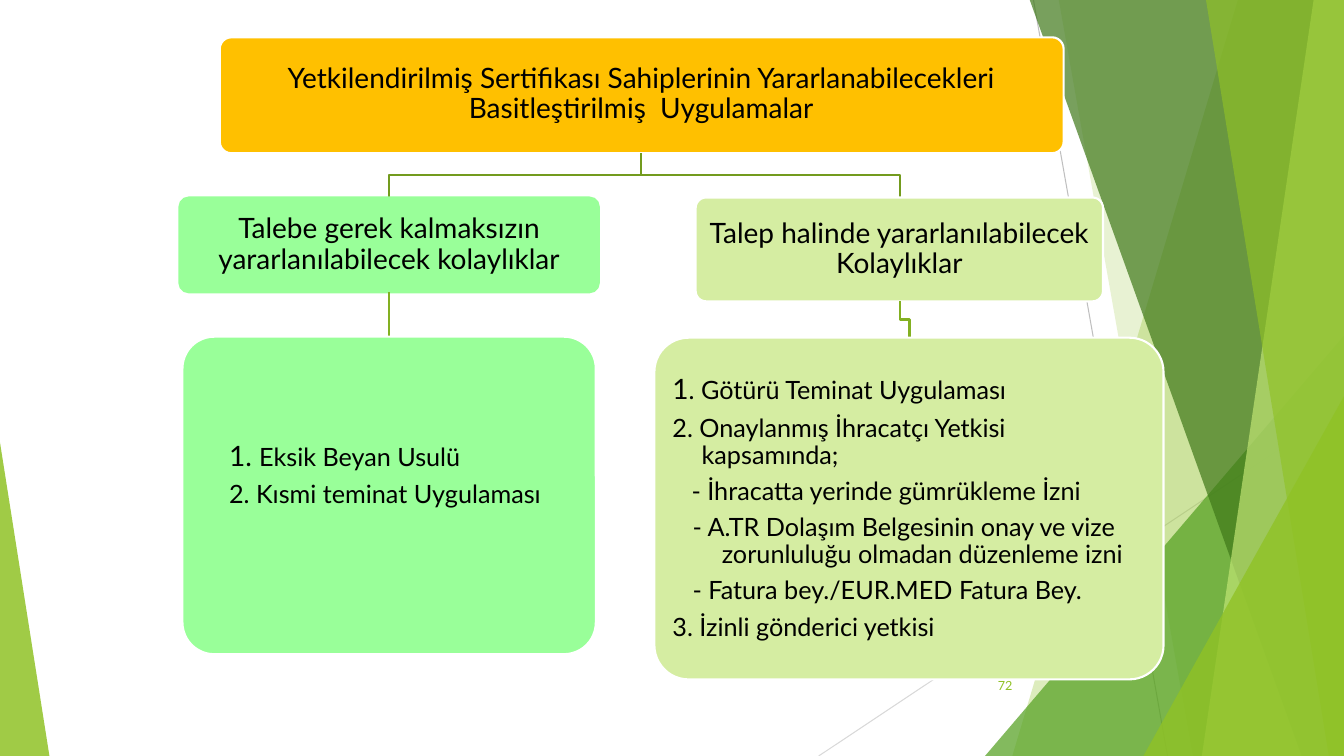
from dataclasses import dataclass

import pptx
import pptx.dml.color
import pptx.enum.shapes
import pptx.enum.text
import pptx.oxml.ns
import pptx.oxml.xmlchemy
import pptx.util
from lxml import etree

PX = 9144  # EMU per px, 100 px to the inch
SHAPE = pptx.enum.shapes.MSO_SHAPE
ALIGN = pptx.enum.text.PP_ALIGN
ANCHOR = pptx.enum.text.MSO_ANCHOR


@dataclass(frozen=True)
class Theme:
    font: str = "Lato"
    heading_size: int = 20
    body_size: int = 18
    number_size: int = 9
    text: str = "000000"
    white: str = "FFFFFF"
    amber: str = "FFC000"
    mint: str = "99FF99"
    lime: str = "D5EDA2"
    fork: str = "739B1E"
    stem: str = "83B022"
    accent: str = "90C226"
    green: str = "54A021"
    dark_green: str = "3F7819"
    pale_green: str = "C0E474"
    grey: str = "BFBFBF"
    light_grey: str = "D9D9D9"


@dataclass(frozen=True)
class Item:
    """A paragraph; lead is its opening part in heading size, lengths in px."""
    text: str
    lead: str = ""
    left: int = 0
    indent: int = 0


def rgb(color):
    return pptx.dml.color.RGBColor.from_string(color)


def write(shape, items, *, theme, size, color, align=ALIGN.LEFT, margins=(8, 8, 8, 8)):
    frame = shape.text_frame
    frame.word_wrap = True
    frame.auto_size = pptx.enum.text.MSO_AUTO_SIZE.NONE
    frame.vertical_anchor = ANCHOR.MIDDLE
    (frame.margin_left, frame.margin_top,
     frame.margin_right, frame.margin_bottom) = [margin * PX for margin in margins]
    for index, item in enumerate(items):
        paragraph = frame.paragraphs[0] if index == 0 else frame.add_paragraph()
        paragraph.alignment = align
        paragraph.line_spacing = 0.9
        paragraph.space_before = pptx.util.Pt(0)
        tallest = theme.heading_size if item.lead else size
        paragraph.space_after = pptx.util.Pt(0.35 * tallest)
        properties = paragraph._p.get_or_add_pPr()
        properties.set("marL", str(item.left * PX))
        properties.set("indent", str(item.indent * PX))
        for text, run_size in ((item.lead, theme.heading_size), (item.text, size)):
            if text:
                run = paragraph.add_run()
                run.text = text
                run.font.name = theme.font
                run.font.size = pptx.util.Pt(run_size)
                run.font.color.rgb = rgb(color)


class SlideBuilder:
    def __init__(self, slide, theme):
        self.slide = slide
        self.shapes = slide.shapes
        self.theme = theme

    def paint(self, shape, fill=None, line=None, opacity=100):
        shape.shadow.inherit = False
        if fill:
            shape.fill.solid()
            shape.fill.fore_color.rgb = rgb(fill)
            if opacity < 100:
                color = shape._element.spPr.find(".//" + pptx.oxml.ns.qn("a:srgbClr"))
                alpha = etree.SubElement(color, pptx.oxml.ns.qn("a:alpha"))
                alpha.set("val", str(opacity * 1000))
        else:
            shape.fill.background()
        if line:
            shape.line.color.rgb = rgb(line)
            shape.line.width = pptx.util.Pt(1.5)
        else:
            shape.line.fill.background()

    def outline(self, points, closed=True, **paint):
        builder = self.shapes.build_freeform(*points[0], scale=PX)
        builder.add_line_segments(points[1:], close=closed)
        self.paint(builder.convert_to_shape(), **paint)

    def triangle(self, box, apex, fill, opacity):
        shape = self.shapes.add_shape(SHAPE.ISOSCELES_TRIANGLE, *[v * PX for v in box])
        shape.adjustments[0] = apex
        self.paint(shape, fill, opacity=opacity)

    def line(self, start, end, color, width):
        connector = self.shapes.add_connector(
            pptx.enum.shapes.MSO_CONNECTOR.STRAIGHT, *[v * PX for v in start + end])
        connector.line.color.rgb = rgb(color)
        connector.line.width = pptx.util.Pt(width)
        etree.SubElement(connector._element.spPr, pptx.oxml.ns.qn("a:effectLst"))

    def link(self, start, end, color):
        """Join two boxes, bending halfway down when they are not aligned."""
        if start[0] == end[0]:
            self.line(start, end, color, 1.5)
            return
        middle = (start[1] + end[1]) // 2
        points = [start, (start[0], middle), (end[0], middle), end]
        self.outline(points, closed=False, line=color)

    def box(self, box, fill, line, items=(), **text_format):
        shape = self.shapes.add_shape(SHAPE.ROUNDED_RECTANGLE, *[v * PX for v in box])
        shape.adjustments[0] = 0.1
        self.paint(shape, fill, line)
        if items:
            write(shape, items, theme=self.theme, color=self.theme.text, **text_format)

    def title(self, box, text):
        title = self.shapes.title
        title.left, title.top, title.width, title.height = [v * PX for v in box]
        write(title, [Item(text)], theme=self.theme, size=self.theme.heading_size,
              color=self.theme.text, align=ALIGN.CENTER)
        self.shapes._spTree.append(title._element)  # in front of its box

    def page_number(self, box, number):
        shape = self.shapes.add_textbox(*[v * PX for v in box])
        write(shape, [Item(number)], theme=self.theme, size=self.theme.number_size,
              color=self.theme.accent, align=ALIGN.RIGHT, margins=(10, 5, 10, 5))


def draw_backdrop(builder):
    theme = builder.theme

    def blade(top_left, bottom_left, fill, opacity):
        """A band that runs from a slanted left edge to the slide's right edge."""
        builder.outline([(top_left, -1), (1333, -1), (1333, 750), (bottom_left, 750)],
                        fill=fill, opacity=opacity)

    builder.line((1025, 0), (1158, 750), theme.grey, 0.75)
    builder.line((1333, 403), (812, 750), theme.light_grey, 0.75)
    blade(1228, 1004, theme.accent, 30)
    blade(1050, 1183, theme.accent, 20)
    builder.triangle((977, 333, 356, 417), 1, theme.green, 72)
    blade(1021, 1291, theme.dark_green, 70)
    blade(1303, 1192, theme.pale_green, 70)
    blade(1196, 1318, theme.accent, 65)
    builder.triangle((1134, 393, 199, 357), 1, theme.accent, 80)
    builder.triangle((0, 439, 49, 311), 0, theme.accent, 85)


def draw_chart(builder):
    theme = builder.theme
    heading = {"size": theme.heading_size, "align": ALIGN.CENTER}
    builder.box((218, 37, 837, 115), theme.amber, theme.white)
    builder.title((221, 40, 830, 108),
                  "Yetkilendirilmiş Sertifikası Sahiplerinin Yararlanabilecekleri "
                  "Basitleştirilmiş  Uygulamalar")

    builder.link((636, 152), (386, 196), theme.fork)
    builder.box((178, 196, 416, 94), theme.mint, theme.mint,
                [Item("Talebe gerek kalmaksızın yararlanılabilecek kolaylıklar")], **heading)
    builder.link((386, 290), (386, 334), theme.stem)
    builder.box((181, 334, 410, 315), theme.mint, theme.white, [
        Item("Eksik Beyan Usulü", lead="1. ", indent=29),
        Item("2. Kısmi teminat Uygulaması", indent=29),
    ], size=theme.body_size, margins=(8, 8, 8, 47))

    builder.link((636, 152), (893, 196), theme.fork)
    builder.box((690, 196, 404, 103), theme.lime, theme.white,
                [Item("Talep halinde yararlanılabilecek Kolaylıklar")], **heading)
    builder.link((893, 299), (902, 335), theme.stem)
    builder.box((649, 335, 505, 339), theme.lime, theme.white, [
        Item(". Götürü Teminat Uygulaması", lead="1"),
        Item("2. Onaylanmış İhracatçı Yetkisi kapsamında;", left=29, indent=-29),
        Item("- İhracatta yerinde gümrükleme İzni", indent=19),
        Item("- A.TR Dolaşım Belgesinin onay ve vize zorunluluğu olmadan düzenleme izni",
             left=49, indent=-29),
        Item("- Fatura bey./EUR.MED Fatura Bey.", left=49, indent=-29),
        Item("3. İzinli gönderici yetkisi", left=49, indent=-49),
    ], size=theme.body_size)


def main():
    presentation = pptx.Presentation()
    presentation.slide_width = 1333 * PX
    presentation.slide_height = 750 * PX
    slide = presentation.slides.add_slide(presentation.slide_layouts.get_by_name("Title Only"))
    builder = SlideBuilder(slide, Theme())
    draw_backdrop(builder)
    builder.page_number((939, 661, 75, 40), "72")
    draw_chart(builder)
    presentation.save("out.pptx")


if __name__ == "__main__":
    main()
